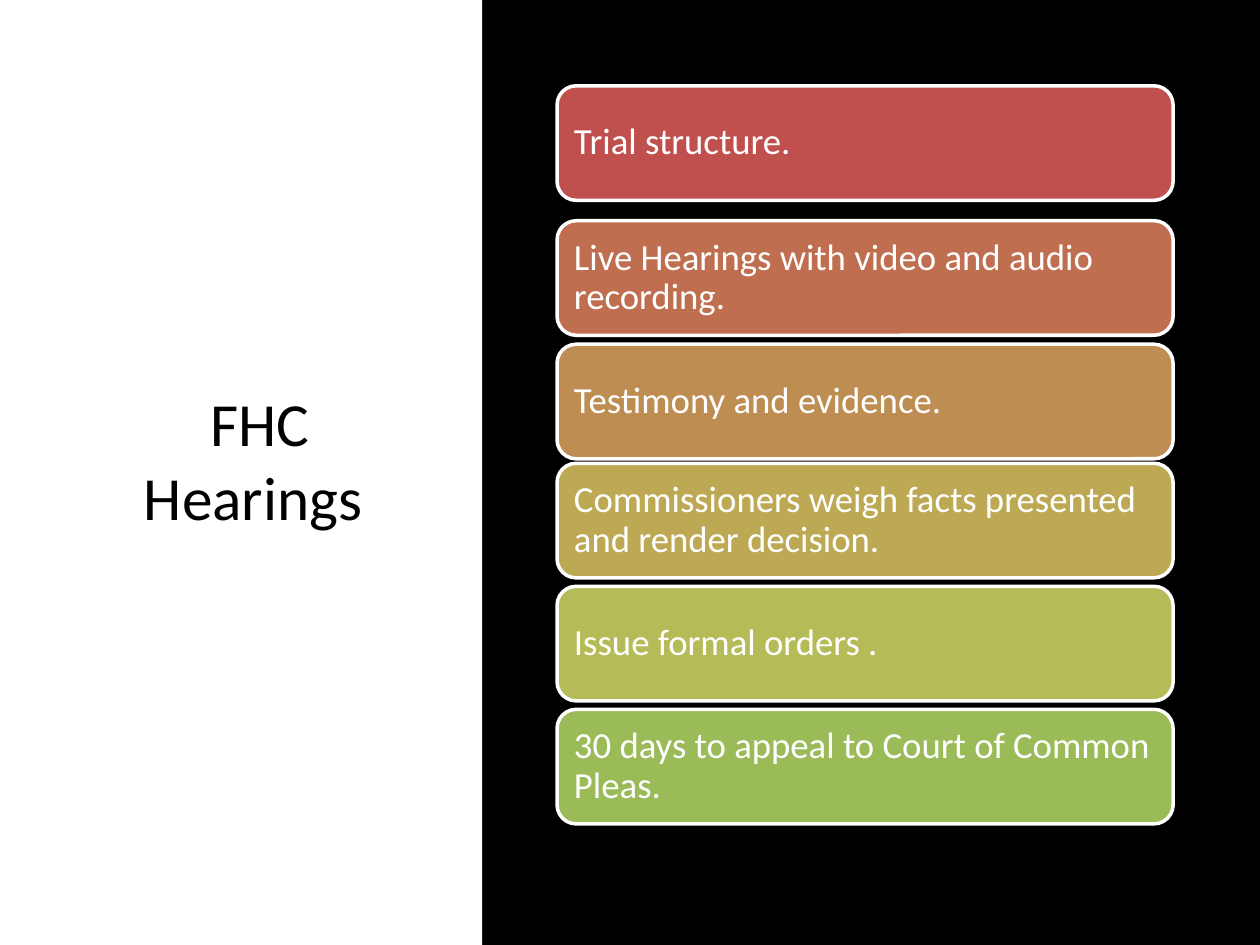
from dataclasses import dataclass

from pptx import Presentation
from pptx.dml.color import RGBColor
from pptx.enum import shapes, text
from pptx.shapes.group import GroupShape
from pptx.util import Cm, Pt

BLACK = RGBColor(0x00, 0x00, 0x00)
WHITE = RGBColor(0xFF, 0xFF, 0xFF)
RED = RGBColor(0xC0, 0x50, 0x4D)
RUST = RGBColor(0xBF, 0x6F, 0x4F)
TAN = RGBColor(0xBE, 0x8D, 0x52)
GOLD = RGBColor(0xBD, 0xA9, 0x54)
OLIVE = RGBColor(0xB5, 0xBC, 0x57)
GREEN = RGBColor(0x9B, 0xBB, 0x59)

FONT = "Calibri"
CARD_LEFT, CARD_WIDTH, CARD_HEIGHT = Cm(11.23), Cm(12.42), Cm(2.31)
CARD_INSET = Cm(0.23)


@dataclass(frozen=True)
class Card:
    label: str
    top: float  # centimetres
    fill: RGBColor


CARDS = [
    Card("Trial structure.", 1.73, RED),
    Card("Live Hearings with video and audio recording.", 4.45, RUST),
    Card("Testimony and evidence.", 6.94, TAN),
    Card("Commissioners weigh facts presented and render decision.", 9.34, GOLD),
    Card("Issue formal orders .", 11.82, OLIVE),
    Card("30 days to appeal to Court of Common Pleas.", 14.3, GREEN),
]


def add_title_panel(slide, height: int) -> None:
    """Put the title on a white panel that fills the left of the slide."""
    title = slide.shapes.title
    title.left, title.top = Cm(1.75), Cm(1.73)
    title.width, title.height = Cm(6.99), Cm(15.04)
    tf = title.text_frame
    tf.text = "FHC Hearings "
    tf.word_wrap = True
    tf.auto_size = text.MSO_AUTO_SIZE.NONE
    tf.vertical_anchor = text.MSO_ANCHOR.MIDDLE
    p = tf.paragraphs[0]
    p.alignment = text.PP_ALIGN.CENTER
    p.font.name, p.font.size = FONT, Pt(35)
    p.font.color.rgb = BLACK

    panel = slide.shapes.add_shape(
        shapes.MSO_SHAPE.RECTANGLE, 0, 0, Cm(9.72), height)
    panel.shadow.inherit = False
    panel.fill.solid()
    panel.fill.fore_color.rgb = WHITE
    panel.line.fill.background()
    title.element.addprevious(panel.element)


def add_card(group: GroupShape, card: Card) -> None:
    sp = group.shapes.add_shape(
        shapes.MSO_SHAPE.ROUNDED_RECTANGLE,
        CARD_LEFT, Cm(card.top), CARD_WIDTH, CARD_HEIGHT)
    sp.shadow.inherit = False
    sp.fill.solid()
    sp.fill.fore_color.rgb = card.fill
    sp.line.color.rgb = WHITE
    sp.line.width = Pt(2)

    tf = sp.text_frame
    tf.text = card.label
    tf.word_wrap = True
    tf.vertical_anchor = text.MSO_ANCHOR.MIDDLE
    tf.margin_left = tf.margin_right = CARD_INSET
    tf.margin_top = tf.margin_bottom = CARD_INSET
    p = tf.paragraphs[0]
    p.alignment = text.PP_ALIGN.LEFT
    p.line_spacing = 0.9
    p.font.name, p.font.size = FONT, Pt(21)
    p.font.color.rgb = WHITE


def main() -> None:
    prs = Presentation()
    prs.slide_width, prs.slide_height = Cm(25.4), Cm(19.05)
    slide = prs.slides.add_slide(prs.slide_layouts.get_by_name("Title Only"))
    slide.background.fill.solid()
    slide.background.fill.fore_color.rgb = BLACK

    add_title_panel(slide, prs.slide_height)
    group = slide.shapes.add_group_shape()
    for card in CARDS:
        add_card(group, card)
    prs.save("out.pptx")


if __name__ == "__main__":
    main()
